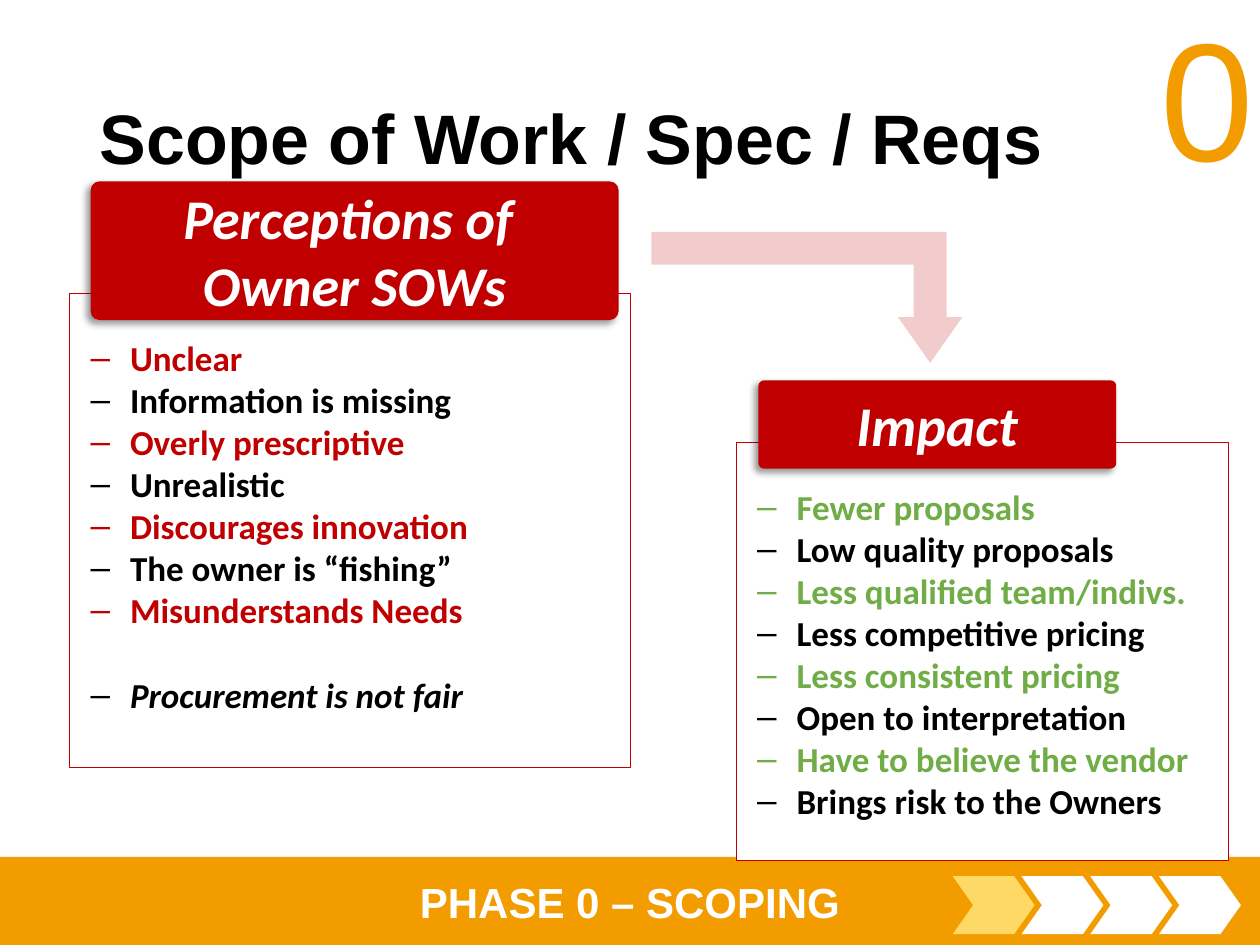
from lxml import etree
from pptx import Presentation
from pptx.dml.color import RGBColor
from pptx.enum.shapes import MSO_SHAPE
from pptx.enum.text import MSO_ANCHOR, MSO_AUTO_SIZE, PP_ALIGN
from pptx.oxml.ns import qn
from pptx.util import Pt

RECT, ROUNDED = MSO_SHAPE.RECTANGLE, MSO_SHAPE.ROUNDED_RECTANGLE
CHEVRON, BENT_ARROW = MSO_SHAPE.CHEVRON, MSO_SHAPE.BENT_UP_ARROW
LEFT, CENTER, RIGHT = PP_ALIGN.LEFT, PP_ALIGN.CENTER, PP_ALIGN.RIGHT
TOP, MIDDLE = MSO_ANCHOR.TOP, MSO_ANCHOR.MIDDLE
NO_FIT = MSO_AUTO_SIZE.NONE

ORANGE, YELLOW, RED, GREEN = "F29C00", "FFD966", "C00000", "70AD47"
WHITE, BLACK = "FFFFFF", "000000"

PERCEPTIONS = ["Unclear", "Information is missing", "Overly prescriptive",
               "Unrealistic", "Discourages innovation",
               "The owner is “fishing”", "Misunderstands Needs",
               "Procurement is not fair"]
IMPACTS = ["Fewer proposals", "Low quality proposals",
           "Less qualified team/indivs.", "Less competitive pricing",
           "Less consistent pricing", "Open to interpretation",
           "Have to believe the vendor", "Brings risk to the Owners"]


def rgb(color):
    return RGBColor.from_string(color)


def write(paragraph, text, size=20, color=BLACK, font="Calibri", bold=True,
          italic=False, align=LEFT):
    paragraph.alignment = align
    run = paragraph.add_run()
    run.text = text
    run.font.name = font
    run.font.size = Pt(size)
    run.font.bold = bold
    run.font.italic = italic
    run.font.color.rgb = rgb(color)


def add_block(slide, preset, box, fill, line=None, adjustments=()):
    block = slide.shapes.add_shape(preset, *map(Pt, box))
    block.shadow.inherit = False
    block.fill.solid()
    block.fill.fore_color.rgb = rgb(fill)
    if line:
        block.line.color.rgb = rgb(line)
        block.line.width = Pt(0.25)
    else:
        block.line.fill.background()
    for index, value in enumerate(adjustments):
        block.adjustments[index] = value
    return block


def add_alpha(holder, percent):
    color = next(holder.iter(qn("a:srgbClr")))
    etree.SubElement(color, qn("a:alpha"), val=str(percent * 1000))


def place(placeholder, box, anchor):
    placeholder.left, placeholder.top, placeholder.width, placeholder.height = map(Pt, box)
    frame = placeholder.text_frame
    frame.word_wrap = True
    frame.auto_size = NO_FIT
    frame.vertical_anchor = anchor
    return frame


def add_heading(slide, box, lines):
    heading = add_block(slide, ROUNDED, box, RED, adjustments=[0.064])
    effects = heading._element.spPr.find(qn("a:effectLst"))
    shadow = etree.SubElement(effects, qn("a:outerShdw"), blurRad=str(Pt(4)),
                              dist=str(Pt(3)), dir=str(135 * 60000),
                              algn="tr", rotWithShape="0")
    etree.SubElement(shadow, qn("a:srgbClr"), val=BLACK)
    add_alpha(shadow, 40)
    frame = heading.text_frame
    frame.vertical_anchor = MIDDLE
    for index, line in enumerate(lines):
        paragraph = frame.add_paragraph() if index else frame.paragraphs[0]
        write(paragraph, line, size=32, color=WHITE, italic=True, align=CENTER)


def fill_list(slide, body, box, items, accent, closing=None):
    slide.shapes._spTree.append(body._element)
    frame = place(body, box, TOP)
    for index, item in enumerate(items):
        paragraph = frame.add_paragraph() if index else frame.paragraphs[0]
        properties = paragraph._p.get_or_add_pPr()
        properties.set("marL", str(Pt(22.5)))
        properties.set("indent", str(-Pt(22.5)))
        etree.SubElement(properties, qn("a:buChar"), char="–")
        last = item == closing
        paragraph.space_before = Pt(24.4 if last else 0)
        write(paragraph, item, color=BLACK if index % 2 else accent, italic=last)


def add_phase_footer(slide):
    add_block(slide, RECT, (0, 489.6, 720, 50.4), ORANGE)
    label = add_block(slide, RECT, (0, 497.5, 720, 36), ORANGE)
    label.text_frame.vertical_anchor = MIDDLE
    write(label.text_frame.paragraphs[0], "PHASE 0 – SCOPING", size=24,
          color=WHITE, font="Arial", align=CENTER)
    for step, color in enumerate([YELLOW, WHITE, WHITE, WHITE]):
        add_block(slide, CHEVRON, (544.4 + 39.3 * step, 500.7, 46.8, 33.1),
                  color, adjustments=[0.352])


def add_phase_number(slide):
    number = slide.shapes.add_textbox(*map(Pt, (648, -7.2, 75.6, 123.8)))
    number.text_frame.word_wrap = True
    write(number.text_frame.paragraphs[0], "0", size=96, color=ORANGE,
          font="Arial", bold=False, align=RIGHT)


def add_impact_arrow(slide):
    arrow = add_block(slide, BENT_ARROW, (372.2, 132.5, 177.8, 74.9), RED,
                      adjustments=[0.25, 0.246, 0.349])
    properties = arrow._element.spPr
    properties.find(qn("a:xfrm")).set("flipV", "1")
    add_alpha(properties.find(qn("a:solidFill")), 20)


def main():
    presentation = Presentation()
    presentation.slide_width, presentation.slide_height = Pt(720), Pt(540)
    slide = presentation.slides.add_slide(presentation.slide_layouts[3])
    title, perceptions, impacts = list(slide.placeholders)[:3]

    add_phase_footer(slide)
    add_phase_number(slide)

    heading = place(title, (49.7, 28.8, 620.6, 104.4), MIDDLE).paragraphs[0]
    heading.line_spacing = 0.9
    write(heading, "Scope of Work / Spec / Reqs", size=40, font="Arial")

    add_block(slide, RECT, (39.6, 167.8, 320.4, 270.7), WHITE, line=RED)
    fill_list(slide, perceptions, (44.6, 188.6, 315.4, 264.2), PERCEPTIONS,
              RED, closing=PERCEPTIONS[-1])
    add_heading(slide, (51.8, 103.7, 301.7, 79.2),
                ["Perceptions of ", "Owner SOWs"])

    add_block(slide, RECT, (420.5, 252.7, 281.5, 239), WHITE, line=RED)
    fill_list(slide, impacts, (425.5, 273.6, 276.5, 200.9), IMPACTS, GREEN)
    add_heading(slide, (433.4, 217.4, 204.5, 50.4), ["Impact"])

    add_impact_arrow(slide)
    presentation.save("out.pptx")


if __name__ == "__main__":
    main()
